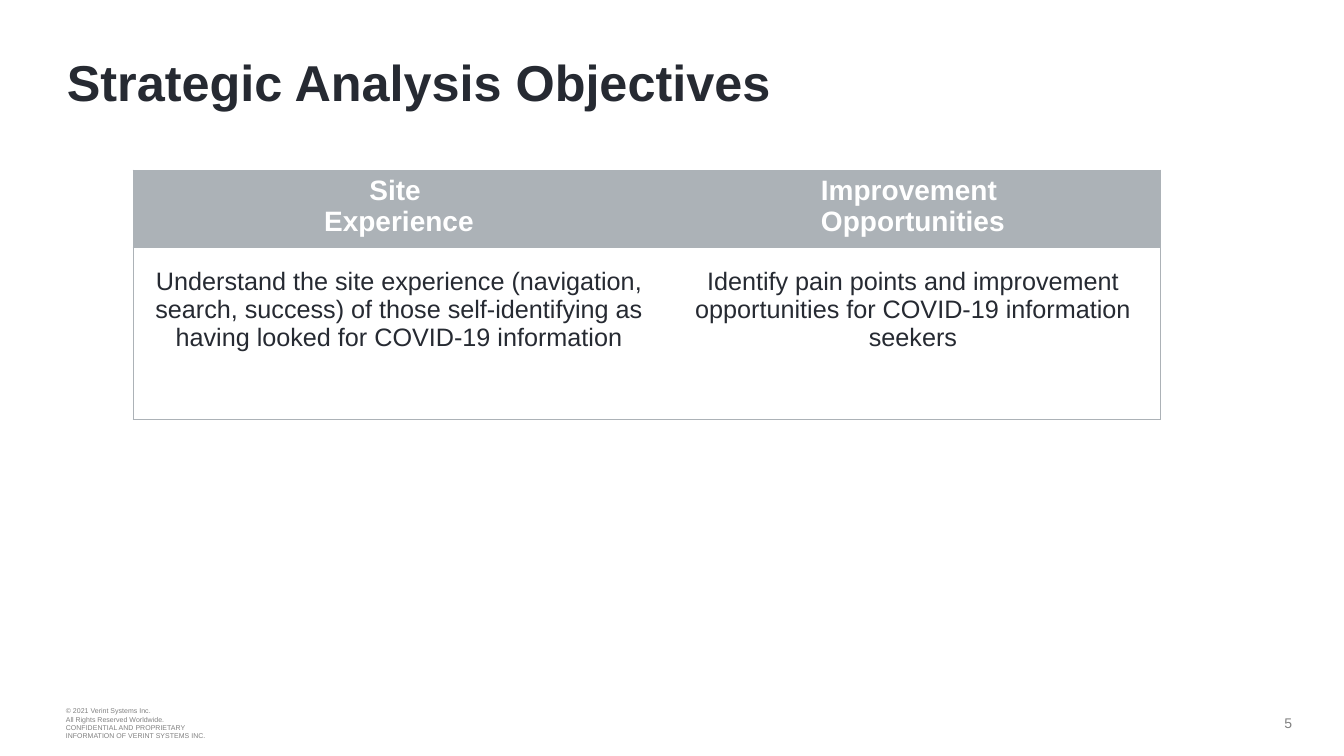
import pptx
import pptx.util
import pptx.dml.color
import pptx.enum.text
import pptx.oxml
import pptx.oxml.ns

PX = 914400 / 100.8
THEME = {
    "font": "Arial", "ink": "262A32", "rule": "ACB2B7", "header": "ACB2B7",
    "white": "FFFFFF", "muted": "808080",
    "title": 36, "heading": 20, "body": 18, "number": 10, "legal": 5,
}
ALIGN = pptx.enum.text.PP_ALIGN
MIDDLE = pptx.enum.text.MSO_ANCHOR.MIDDLE


def px(n):
    return pptx.util.Emu(round(n * PX))


def write(tf, lines, size, color, bold=False, align=ALIGN.LEFT):
    tf.word_wrap = True
    for i, line in enumerate(lines):
        p = tf.paragraphs[0] if i == 0 else tf.add_paragraph()
        p.alignment = align
        r = p.add_run()
        r.text = line
        r.font.name = THEME["font"]
        r.font.size = pptx.util.Pt(THEME[size])
        r.font.bold = bold
        r.font.color.rgb = pptx.dml.color.RGBColor.from_string(THEME[color])


prs = pptx.Presentation()
prs.slide_width, prs.slide_height = px(1344), px(756)
s = prs.slides.add_slide(prs.slide_layouts[6])

legal = [
    "© 2021 Verint Systems Inc.",
    "All Rights Reserved Worldwide.",
    "CONFIDENTIAL AND PROPRIETARY",
    "INFORMATION OF VERINT SYSTEMS INC.",
]
texts = [
    ((56, 700, 242, 47), legal, "legal", "muted", False, ALIGN.LEFT),
    ((1190, 699, 112, 47), ["5"], "number", "muted", False, ALIGN.RIGHT),
    ((57, 42, 1230, 78), ["Strategic Analysis Objectives"], "title", "ink", True, ALIGN.LEFT),
]
for box, lines, size, color, bold, align in texts:
    tf = s.shapes.add_textbox(*map(px, box)).text_frame
    tf.vertical_anchor = MIDDLE
    write(tf, lines, size, color, bold, align)

objectives = [
    (["Site ", "Experience"],
     "Understand the site experience (navigation, search, success) of those "
     "self-identifying as having looked for COVID-19 information"),
    (["Improvement ", "Opportunities"],
     "Identify pain points and improvement opportunities for COVID-19 information seekers"),
]
widths, heights = [532, 496], [66, 172]
table = s.shapes.add_table(2, 2, px(133), px(170), px(sum(widths)), px(sum(heights))).table
for i in range(2):
    table.columns[i].width = px(widths[i])
    table.rows[i].height = px(heights[i])

for col, (heading, body) in enumerate(objectives):
    for row in range(2):
        cell = table.cell(row, col)
        if row == 0:
            write(cell.text_frame, heading, "heading", "white", True, ALIGN.CENTER)
        else:
            write(cell.text_frame, [body], "body", "ink", False, ALIGN.CENTER)
            cell.margin_left = cell.margin_right = px(20)
            cell.margin_top = cell.margin_bottom = px(20)
        cell.fill.solid()
        cell.fill.fore_color.rgb = pptx.dml.color.RGBColor.from_string(
            THEME["header" if row == 0 else "white"])
        ruled = {"L": col == 0, "R": col == 1, "T": True, "B": True}
        for i, (side, shown) in enumerate(ruled.items()):
            paint = (f'<a:solidFill><a:srgbClr val="{THEME["rule"]}"/></a:solidFill>'
                     if shown else "<a:noFill/>")
            line = pptx.oxml.parse_xml(
                f'<a:ln{side} {pptx.oxml.ns.nsdecls("a")} w="9525">{paint}</a:ln{side}>')
            cell._tc.get_or_add_tcPr().insert(i, line)

prs.save("out.pptx")
